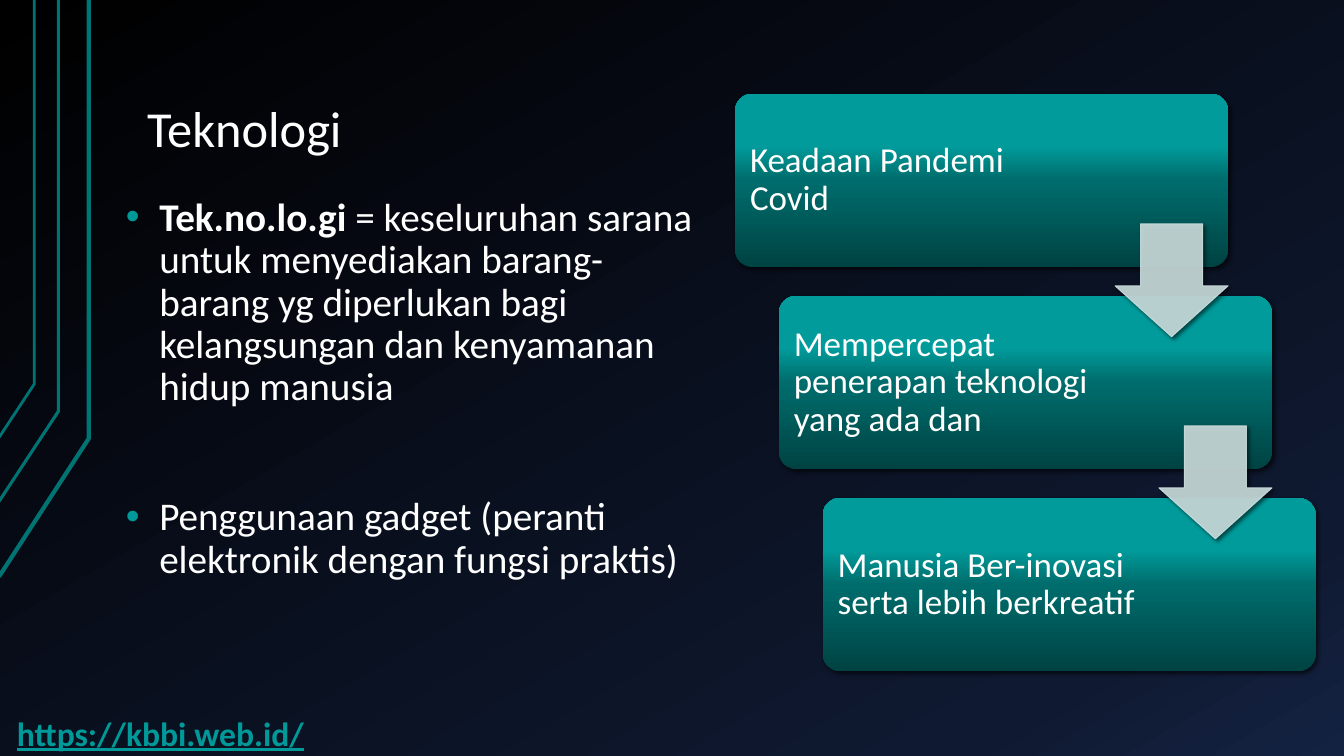
from lxml import etree
from pptx import Presentation
from pptx import util as u
from pptx.dml.color import RGBColor
from pptx.enum import shapes, text
from pptx.oxml import ns

COLORS = {"white": "FFFFFF", "teal": "009999", "circuit": "007373",
          "arrow": "CCDEDE", "shadow": "000000"}
NIGHT = [(0, "000000"), (85, "0F1931"), (100, "142242")]
TEAL_FADE = [(0, "004343"), (50, "006C6C"), (70, "019B9B"), (100, "009999")]
CIRCUITS = [([(-0.01, 5.72), (0.88, 4.35), (0.88, 0)], 3),
            ([(-0.02, 4.99), (0.58, 4.08), (0.58, 0)], 2.25),
            ([(-0.01, 4.34), (0.34, 3.81), (0.34, 0)], 2)]
STEPS = ["Keadaan Pandemi Covid",
         "Mempercepat penerapan teknologi yang ada dan",
         "Manusia Ber-inovasi serta lebih berkreatif"]
DEFINITIONS = [
    [("Tek.no.lo.gi ", True),
     ("= keseluruhan sarana untuk menyediakan barang-barang yg diperlukan "
      "bagi kelangsungan dan kenyamanan hidup manusia", False)],
    [("Penggunaan gadget (peranti elektronik dengan fungsi praktis)", False)]]


def rgb(name):
    """Return the named colour."""
    return RGBColor.from_string(COLORS[name])


def add_xml(parent, tag, **attributes):
    """Append a DrawingML element to parent."""
    return etree.SubElement(parent, ns.qn(tag), attributes)


def set_gradient(fill, owner, stops, angle):
    """Fill with gradient stops at a counter-clockwise angle."""
    fill.gradient()
    fill.gradient_angle = angle
    stop_list = next(owner.iter(ns.qn("a:gsLst")))
    for old_stop in list(stop_list):
        stop_list.remove(old_stop)
    for percent, color in stops:
        stop = add_xml(stop_list, "a:gs", pos=str(percent * 1000))
        add_xml(stop, "a:srgbClr", val=color)


def add_shadow(shape):
    """Give a shape a soft shadow to the lower right."""
    shape.shadow.inherit = False
    effects = shape._element.spPr.find(ns.qn("a:effectLst"))
    shadow = add_xml(effects, "a:outerShdw", blurRad=str(u.Pt(3)),
                     dist=str(u.Pt(2)), dir="2700000", rotWithShape="0")
    color = add_xml(shadow, "a:srgbClr", val=COLORS["shadow"])
    add_xml(color, "a:alpha", val="60000")


def add_run(paragraph, words, size, color="white", bold=False):
    """Add one run of Calibri text."""
    run = paragraph.add_run()
    run.text = words
    run.font.name, run.font.size, run.font.bold = "Calibri", u.Pt(size), bold
    run.font.color.rgb = rgb(color)
    return run


def add_text_frame(slide, left, top, width, height, inset_x=0.13, inset_y=0.07):
    """Add a wrapping text box and return its frame."""
    frame = slide.shapes.add_textbox(*map(u.Inches, (left, top, width, height))).text_frame
    frame.word_wrap = True
    frame.margin_left = frame.margin_right = u.Inches(inset_x)
    frame.margin_top = frame.margin_bottom = u.Inches(inset_y)
    return frame


def add_circuit(slide, points, weight):
    """Draw one bent circuit line."""
    start, *rest = [(u.Inches(x), u.Inches(y)) for x, y in points]
    builder = slide.shapes.build_freeform(*start)
    builder.add_line_segments(rest, close=False)
    circuit = builder.convert_to_shape()
    circuit.shadow.inherit = False
    circuit.fill.background()
    circuit.line.color.rgb = rgb("circuit")
    circuit.line.width = u.Pt(weight)


def add_definitions(slide):
    """Add the bulleted definitions."""
    frame = add_text_frame(slide, 1.12, 1.89, 5.94, 4.88)
    for index, runs in enumerate(DEFINITIONS):
        paragraph = frame.add_paragraph() if index else frame.paragraphs[0]
        properties = paragraph._p.get_or_add_pPr()
        properties.set("marL", str(u.Inches(0.33)))
        properties.set("indent", str(u.Inches(-0.33)))
        paragraph.line_spacing = 0.9
        if index:
            paragraph.space_before = u.Pt(62.5)
        bullet_color = add_xml(properties, "a:buClr")
        add_xml(bullet_color, "a:srgbClr", val=COLORS["teal"])
        add_xml(properties, "a:buFont", typeface="Arial")
        add_xml(properties, "a:buChar", char="•")
        for words, bold in runs:
            add_run(paragraph, words, 28, bold=bold)


def add_step(slide, left, top, words):
    """Add one rounded step of the staircase."""
    step = slide.shapes.add_shape(shapes.MSO_SHAPE.ROUNDED_RECTANGLE, u.Inches(left),
                                  u.Inches(top), u.Inches(4.89), u.Inches(1.72))
    step.adjustments[0] = 0.1
    set_gradient(step.fill, step._element, TEAL_FADE, 90)
    step.line.fill.background()
    add_shadow(step)
    frame = step.text_frame
    frame.word_wrap = True
    frame.vertical_anchor = text.MSO_ANCHOR.MIDDLE
    frame.margin_left, frame.margin_right = u.Inches(0.1), u.Inches(1.66)
    paragraph = frame.paragraphs[0]
    paragraph.alignment = text.PP_ALIGN.LEFT
    paragraph.line_spacing = 0.9
    add_run(paragraph, words, 25)


def add_arrow(slide, left, top):
    """Add a translucent arrow down to the next step."""
    arrow = slide.shapes.add_shape(shapes.MSO_SHAPE.DOWN_ARROW, u.Inches(left),
                                   u.Inches(top), u.Inches(1.12), u.Inches(1.12))
    arrow.adjustments[0], arrow.adjustments[1] = 0.55, 0.45
    arrow.fill.solid()
    arrow.fill.fore_color.rgb = arrow.line.color.rgb = rgb("arrow")
    arrow.line.width = u.Pt(0.75)
    for color in arrow._element.spPr.iter(ns.qn("a:srgbClr")):
        add_xml(color, "a:alpha", val="90000")
    add_shadow(arrow)


def main():
    """Build the slide and save it."""
    deck = Presentation()
    deck.slide_width, deck.slide_height = u.Inches(13.33), u.Inches(7.5)
    slide = deck.slides.add_slide(deck.slide_layouts[6])
    set_gradient(slide.background.fill, slide._element, NIGHT, 300)
    for points, weight in CIRCUITS:
        add_circuit(slide, points, weight)

    title = add_text_frame(slide, 1.33, 0.3, 11.33, 1.34)
    title.vertical_anchor = text.MSO_ANCHOR.BOTTOM
    title.paragraphs[0].line_spacing = 0.9
    add_run(title.paragraphs[0], "Teknologi", 36)
    add_definitions(slide)

    corners = [(7.29 + 0.435 * i, 0.93 + 2.005 * i) for i in range(len(STEPS))]
    for (left, top), words in zip(corners, STEPS):
        add_step(slide, left, top, words)
    for left, top in corners[:-1]:
        add_arrow(slide, left + 3.77, top + 1.29)

    address = add_text_frame(slide, 0.07, 7.02, 6.68, 0.5, 0.1, 0.05)
    link = add_run(address.paragraphs[0], "https://kbbi.web.id/", 24, "teal", True)
    link.font.underline = True
    deck.save("out.pptx")


if __name__ == "__main__":
    main()
